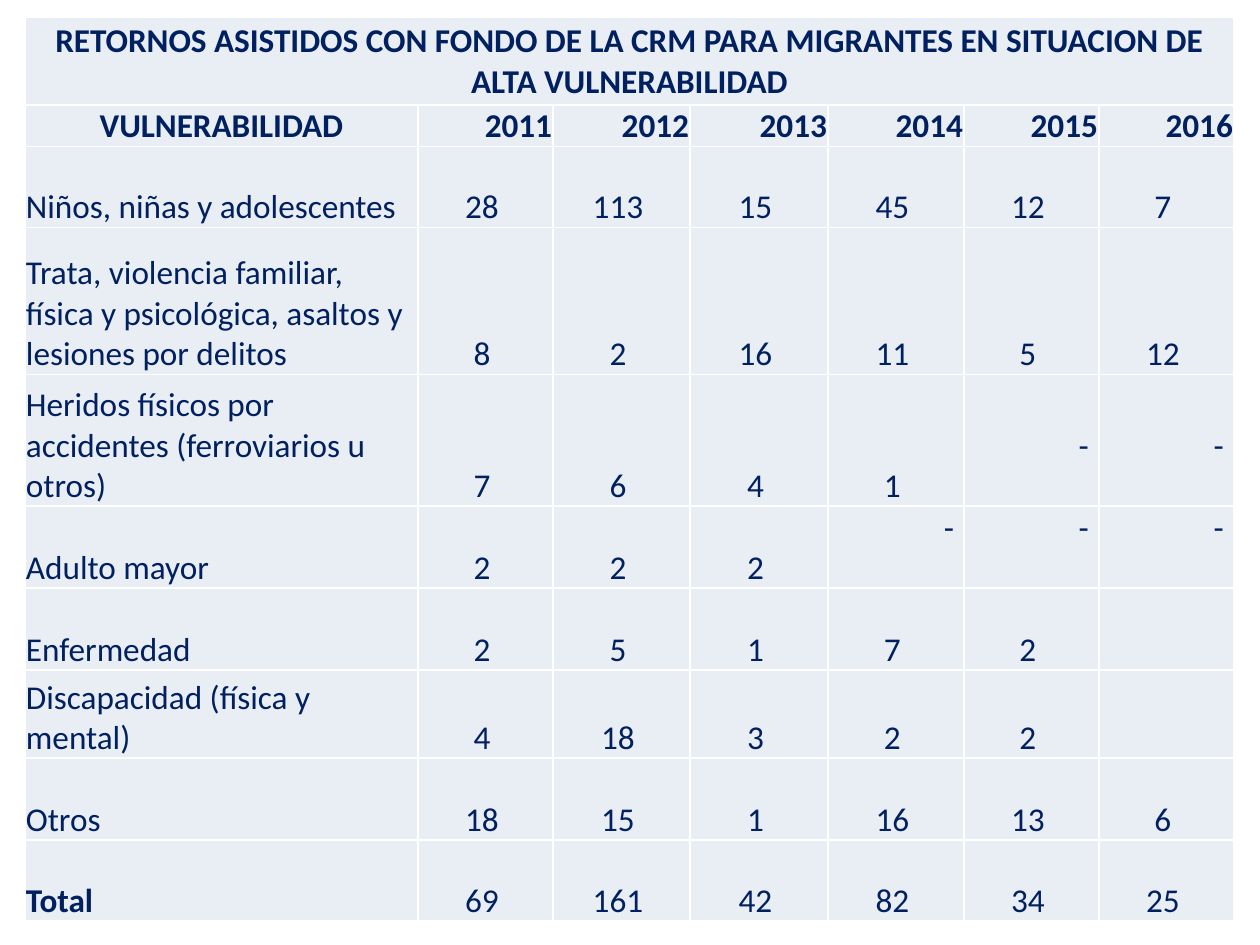
import lxml.etree
import pptx
import pptx.dml.color
import pptx.enum.text
import pptx.oxml.ns
import pptx.util

COLORS = {"text": "002060", "cell": "E9EDF4", "border": "FFFFFF"}
FONT = "Calibri"
ALIGN = pptx.enum.text.PP_ALIGN
ANCHOR = pptx.enum.text.MSO_ANCHOR

TITLE = ("RETORNOS ASISTIDOS CON FONDO DE LA CRM PARA MIGRANTES "
         "EN SITUACION DE ALTA VULNERABILIDAD")
HEADINGS = ["VULNERABILIDAD", "2011", "2012", "2013", "2014", "2015", "2016"]
RECORDS = [
    ["Niños, niñas y adolescentes", "28", "113", "15", "45", "12", "7"],
    ["Trata, violencia familiar, física y psicológica, asaltos y lesiones por delitos",
     "8", "2", "16", "11", "5", "12"],
    ["Heridos físicos por accidentes (ferroviarios u otros)", "7", "6", "4", "1", "-", "-"],
    ["Adulto mayor", "2", "2", "2", "-", "-", "-"],
    ["Enfermedad", "2", "5", "1", "7", "2", ""],
    ["Discapacidad (física y mental)", "4", "18", "3", "2", "2", ""],
    ["Otros", "18", "15", "1", "16", "13", "6"],
    ["Total", "69", "161", "42", "82", "34", "25"],
]
COLUMN_WIDTHS = [393, 135, 137, 138, 136, 135, 135]
ROW_HEIGHTS = [88, 41, 81, 147, 132, 82, 82, 88, 82, 81]


def px(length):
    return pptx.util.Emu(round(length * 914400 / 126))


def color(name):
    return pptx.dml.color.RGBColor.from_string(COLORS[name])


def write_text(frame, text, size=19, bold=False, align=ALIGN.LEFT):
    paragraph = frame.paragraphs[0]
    paragraph.alignment = align
    paragraph.font.size = pptx.util.Pt(size)
    if text:
        run = paragraph.add_run()
        run.text = text
        run.font.name = FONT
        run.font.size = pptx.util.Pt(size)
        run.font.bold = bold
        run.font.color.rgb = color("text")


class SlideBuilder:
    def __init__(self, presentation):
        self.slide = presentation.slides.add_slide(presentation.slide_layouts[6])

    def table(self, left, top, widths, heights):
        table = self.slide.shapes.add_table(
            len(heights), len(widths), px(left), px(top),
            px(sum(widths)), px(sum(heights))).table
        table.first_row = False
        table.horz_banding = False
        for column, width in zip(table.columns, widths):
            column.width = px(width)
        for row, height in zip(table.rows, heights):
            row.height = px(height)
        for cell in table.iter_cells():
            cell.fill.solid()
            cell.fill.fore_color.rgb = color("cell")
            self.border(cell)
        return table

    def border(self, cell, width=1):
        properties = cell._tc.get_or_add_tcPr()
        name = pptx.oxml.ns.qn
        for index, side in enumerate(("a:lnL", "a:lnR", "a:lnT", "a:lnB")):
            line = lxml.etree.Element(name(side), w=str(pptx.util.Pt(width)))
            fill = lxml.etree.SubElement(line, name("a:solidFill"))
            lxml.etree.SubElement(fill, name("a:srgbClr"), val=COLORS["border"])
            properties.insert(index, line)

    def cell(self, cell, text, anchor=ANCHOR.BOTTOM, right=1, bottom=0, **style):
        cell.margin_left = cell.margin_top = px(1)
        cell.margin_right = px(right)
        cell.margin_bottom = px(bottom)
        cell.vertical_anchor = anchor
        write_text(cell.text_frame, text, **style)


def main():
    presentation = pptx.Presentation()
    presentation.slide_width = px(1260)
    presentation.slide_height = px(945)
    builder = SlideBuilder(presentation)
    table = builder.table(25, 17, COLUMN_WIDTHS, ROW_HEIGHTS)

    table.cell(0, 0).merge(table.cell(0, len(COLUMN_WIDTHS) - 1))
    builder.cell(table.cell(0, 0), TITLE, anchor=ANCHOR.MIDDLE,
                 bold=True, align=ALIGN.CENTER)
    for column, heading in enumerate(HEADINGS):
        builder.cell(table.cell(1, column), heading, bold=True,
                     align=ALIGN.RIGHT if column else ALIGN.CENTER)
    for row, (label, *values) in enumerate(RECORDS, start=2):
        builder.cell(table.cell(row, 0), label, bold=label == "Total")
        for column, value in enumerate(values, start=1):
            if value == "-":
                style = {"right": 10, "bottom": 40, "align": ALIGN.RIGHT}
            else:
                style = {"right": 8, "align": ALIGN.CENTER}
            builder.cell(table.cell(row, column), value, **style)

    presentation.save("out.pptx")


if __name__ == "__main__":
    main()
